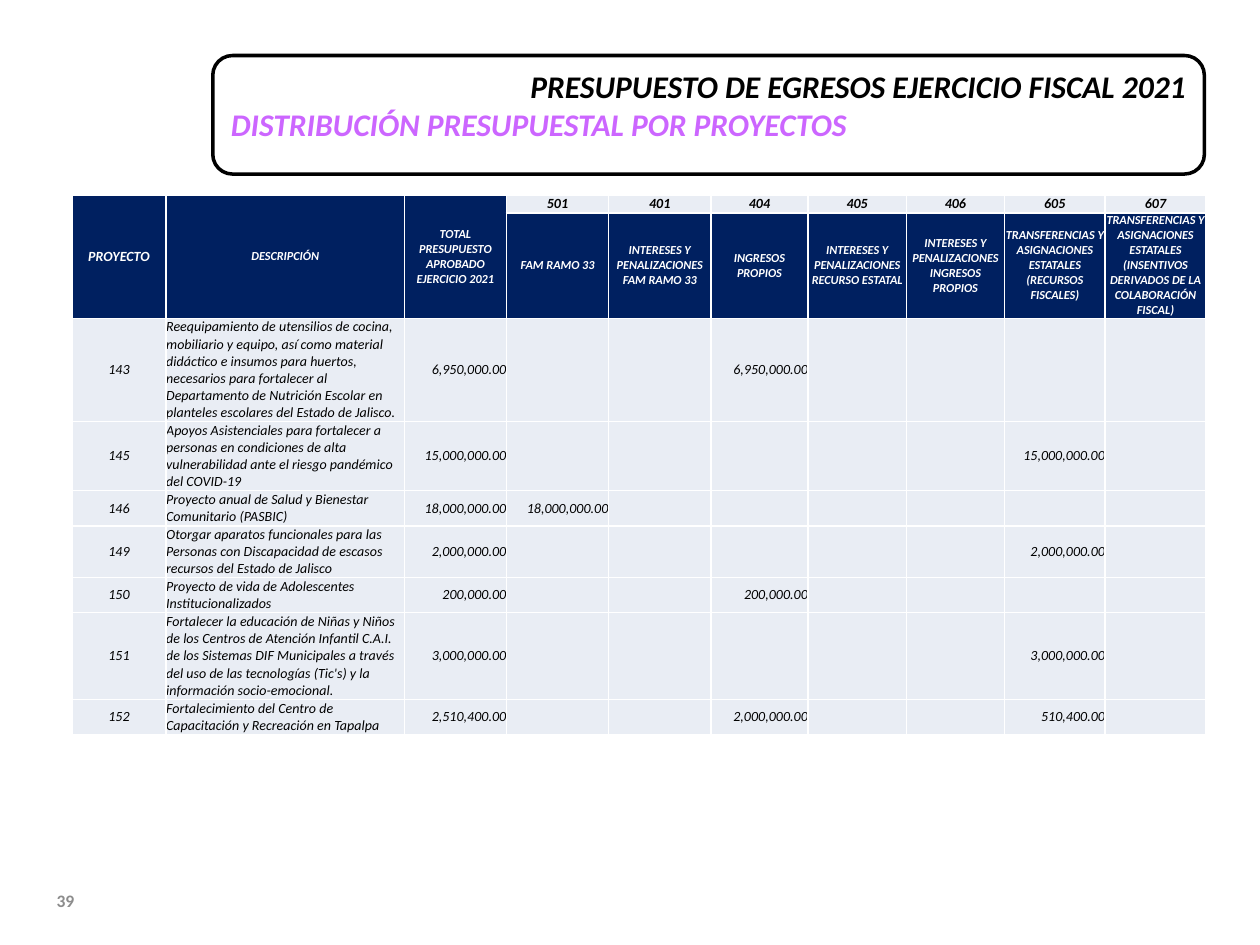
"""Build the slide that distributes the 2021 budget by project."""
from dataclasses import dataclass, field

from lxml.etree import SubElement
from pptx import Presentation
from pptx.dml.color import RGBColor
from pptx.enum.shapes import MSO_SHAPE
from pptx.enum.text import MSO_ANCHOR, PP_ALIGN
from pptx.oxml.ns import qn
from pptx.slide import Slide
from pptx.table import _Cell
from pptx.util import Cm, Pt

NAVY, PALE, WHITE, BLACK = "002060", "E9EDF4", "FFFFFF", "000000"
VIOLET, GREY = "CC66FF", "8C8C8C"
COLUMN_WIDTHS = (1.9, 4.8, 2.06, 2.06, 2.06, 1.96, 1.98, 1.98, 2.03, 2.03)
ROW_HEIGHTS = (0.36, 2.13, 2.08, 1.39, 0.71, 1.04, 0.71, 1.75, 0.71)


@dataclass(frozen=True)
class Style:
    size: float
    color: str
    bold: bool = False
    italic: bool = True
    align: PP_ALIGN = PP_ALIGN.CENTER


@dataclass(frozen=True)
class Project:
    number: str
    description: str
    total: str
    amounts: dict[str, str] = field(default_factory=dict)


HEADING = Style(7, WHITE, bold=True)
PROJECT_HEADING = Style(8, WHITE, bold=True)
FUND_CODE = Style(8, BLACK, bold=True)
NUMBER = Style(8, BLACK)
DESCRIPTION = Style(8, BLACK, align=PP_ALIGN.LEFT)
AMOUNT = Style(8, BLACK, align=PP_ALIGN.RIGHT)

MAIN_HEADINGS = (
    ("PROYECTO", PROJECT_HEADING),
    ("DESCRIPCIÓN", HEADING),
    ("TOTAL PRESUPUESTO APROBADO EJERCICIO 2021", HEADING),
)
FUNDS = {
    "501": "FAM RAMO 33",
    "401": "INTERESES Y PENALIZACIONES FAM RAMO 33",
    "404": "INGRESOS PROPIOS",
    "405": "INTERESES Y PENALIZACIONES RECURSO ESTATAL",
    "406": "INTERESES Y PENALIZACIONES INGRESOS PROPIOS",
    "605": "TRANSFERENCIAS Y ASIGNACIONES ESTATALES (RECURSOS FISCALES)",
    "607": "TRANSFERENCIAS Y ASIGNACIONES ESTATALES (INSENTIVOS DERIVADOS DE LA COLABORACIÓN FISCAL)",
}
PROJECTS = (
    Project("143", "Reequipamiento de utensilios de cocina, mobiliario y equipo, así como material "
            "didáctico e insumos para huertos, necesarios para fortalecer al Departamento de "
            "Nutrición Escolar en planteles escolares del Estado de Jalisco.",
            "6,950,000.00", {"404": "6,950,000.00"}),
    Project("145", "Apoyos Asistenciales para fortalecer a personas en condiciones de alta "
            "vulnerabilidad ante el riesgo pandémico del COVID-19",
            "15,000,000.00", {"605": "15,000,000.00"}),
    Project("146", "Proyecto anual de Salud y Bienestar Comunitario (PASBIC)",
            "18,000,000.00", {"501": "18,000,000.00"}),
    Project("149", "Otorgar aparatos funcionales para las Personas con Discapacidad de escasos "
            "recursos del Estado de Jalisco",
            "2,000,000.00", {"605": "2,000,000.00"}),
    Project("150", "Proyecto de vida de Adolescentes Institucionalizados",
            "200,000.00", {"404": "200,000.00"}),
    Project("151", "Fortalecer la educación de Niñas y Niños de los Centros de Atención Infantil "
            "C.A.I. de los Sistemas DIF Municipales a través del uso de las tecnologías (Tic's) "
            "y la información socio-emocional.",
            "3,000,000.00", {"605": "3,000,000.00"}),
    Project("152", "Fortalecimiento del Centro de Capacitación y Recreación en Tapalpa",
            "2,510,400.00", {"404": "2,000,000.00", "605": "510,400.00"}),
)


def rgb(color: str) -> RGBColor:
    """Turn a hex string into a colour."""
    return RGBColor.from_string(color)


def write(paragraph, text: str, style: Style) -> None:
    """Put styled text in a paragraph."""
    if text:
        paragraph.text = text
    else:
        SubElement(paragraph._p, qn("a:endParaRPr"), sz=str(style.size * 100))
    paragraph.alignment = style.align
    font = paragraph.font
    font.name, font.size = "Calibri", Pt(style.size)
    font.bold, font.italic = style.bold, style.italic
    font.color.rgb = rgb(style.color)


def fill_cell(cell: _Cell, text: str, style: Style, background: str) -> None:
    """Give a cell its text, white borders and background."""
    cell.margin_left = cell.margin_right = cell.margin_top = cell.margin_bottom = 0
    cell.vertical_anchor = MSO_ANCHOR.MIDDLE
    properties = cell._tc.get_or_add_tcPr()
    for side in ("L", "R", "T", "B"):
        border = SubElement(properties, qn(f"a:ln{side}"), w=str(Pt(1)))
        solid = SubElement(border, qn("a:solidFill"))
        SubElement(solid, qn("a:srgbClr"), val=WHITE)
    cell.fill.solid()
    cell.fill.fore_color.rgb = rgb(background)
    write(cell.text_frame.paragraphs[0], text, style)


def add_title(slide: Slide) -> None:
    """Draw the rounded title frame."""
    frame = slide.shapes.add_shape(
        MSO_SHAPE.ROUNDED_RECTANGLE, Cm(4.29), Cm(1.12), Cm(19.99), Cm(2.39))
    frame.shadow.inherit = False
    frame.fill.background()
    frame.line.color.rgb = rgb(BLACK)
    frame.line.width = Pt(2)
    title = frame.text_frame
    title.word_wrap = True
    title.vertical_anchor = MSO_ANCHOR.TOP
    write(title.paragraphs[0], "PRESUPUESTO DE EGRESOS EJERCICIO FISCAL 2021",
          Style(18, BLACK, bold=True, align=PP_ALIGN.RIGHT))
    write(title.add_paragraph(), "DISTRIBUCIÓN PRESUPUESTAL POR PROYECTOS",
          Style(18, VIOLET, bold=True, align=PP_ALIGN.JUSTIFY))


def add_budget(slide: Slide) -> None:
    """Draw the table of projects and funds."""
    budget = slide.shapes.add_table(
        len(ROW_HEIGHTS), len(COLUMN_WIDTHS), Cm(1.45), Cm(3.93),
        Cm(sum(COLUMN_WIDTHS)), Cm(sum(ROW_HEIGHTS))).table
    for column, width in zip(budget.columns, COLUMN_WIDTHS):
        column.width = Cm(width)
    for row, height in zip(budget.rows, ROW_HEIGHTS):
        row.height = Cm(height)

    for col, (heading, style) in enumerate(MAIN_HEADINGS):
        budget.cell(0, col).merge(budget.cell(1, col))
        fill_cell(budget.cell(0, col), heading, style, NAVY)
        fill_cell(budget.cell(1, col), "", style, NAVY)
    for col, (code, fund) in enumerate(FUNDS.items(), start=len(MAIN_HEADINGS)):
        fill_cell(budget.cell(0, col), code, FUND_CODE, PALE)
        fill_cell(budget.cell(1, col), fund, HEADING, NAVY)
    for row, project in enumerate(PROJECTS, start=2):
        entries = [(project.number, NUMBER), (project.description, DESCRIPTION),
                   (project.total, AMOUNT)]
        entries += [(project.amounts.get(code, ""), AMOUNT) for code in FUNDS]
        for col, (text, style) in enumerate(entries):
            fill_cell(budget.cell(row, col), text, style, PALE)


def add_page_number(slide: Slide) -> None:
    """Write the page number at the bottom left."""
    page = slide.shapes.add_textbox(Cm(0.89), Cm(17.65), Cm(5.92), Cm(1.02)).text_frame
    page.word_wrap = True
    page.vertical_anchor = MSO_ANCHOR.MIDDLE
    write(page.paragraphs[0], "39",
          Style(10, GREY, bold=True, italic=False, align=PP_ALIGN.LEFT))


def main() -> None:
    """Build and save the presentation."""
    presentation = Presentation()
    presentation.slide_width, presentation.slide_height = Cm(25.4), Cm(19.05)
    slide = presentation.slides.add_slide(presentation.slide_layouts[6])
    add_page_number(slide)
    add_title(slide)
    add_budget(slide)
    presentation.save("out.pptx")


if __name__ == "__main__":
    main()
